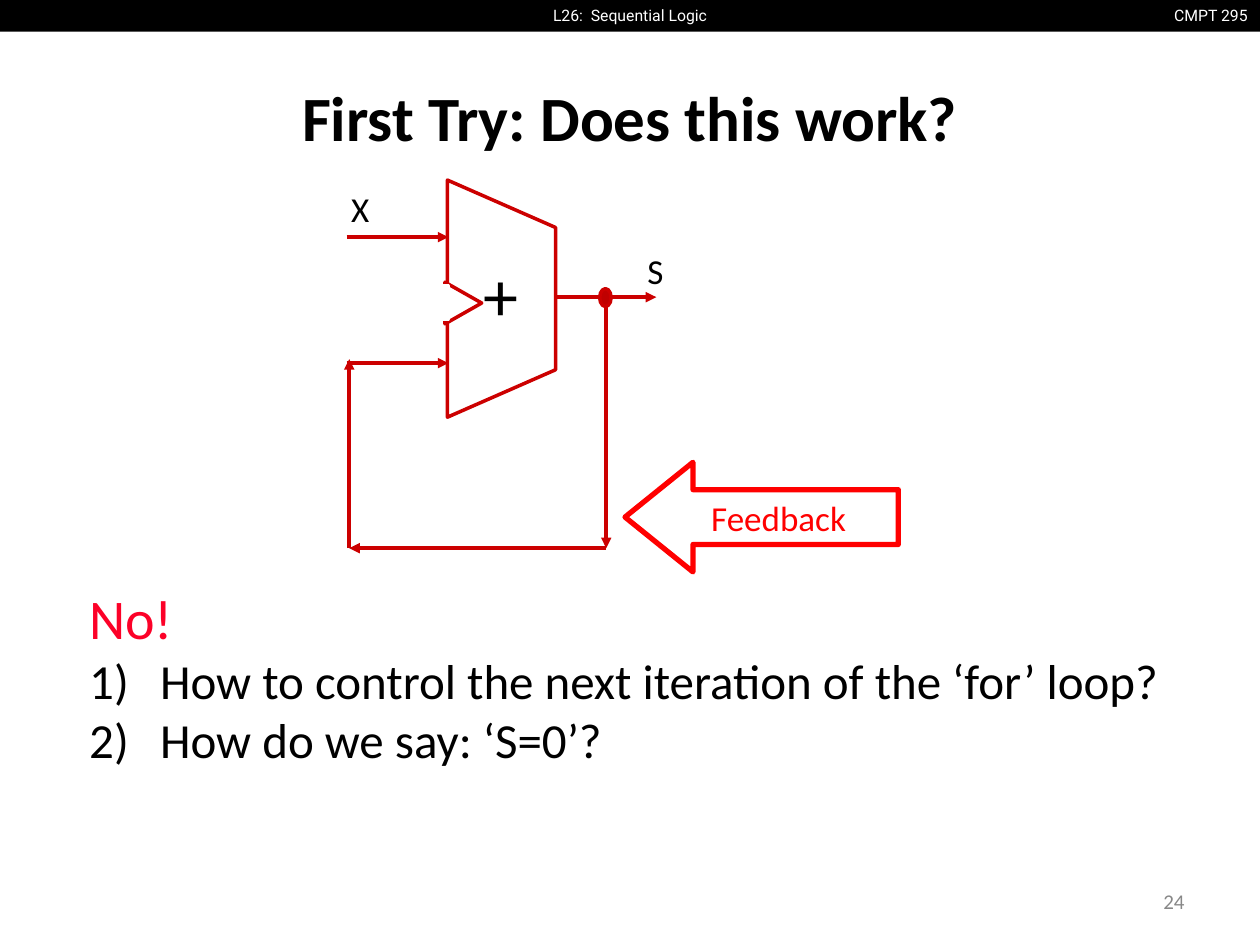
from typing import NamedTuple, Optional

from lxml.etree import SubElement
from pptx import Presentation
from pptx.dml.color import RGBColor
from pptx.enum.shapes import MSO_CONNECTOR, MSO_SHAPE
from pptx.enum.text import MSO_ANCHOR, PP_ALIGN
from pptx.oxml.ns import qn
from pptx.util import Cm, Pt

BLACK = RGBColor(0x00, 0x00, 0x00)
WHITE = RGBColor(0xFF, 0xFF, 0xFF)
GRAY = RGBColor(0x88, 0x88, 0x88)
RED = RGBColor(0xFF, 0x00, 0x00)
ANSWER_RED = RGBColor(0xFC, 0x01, 0x28)
WIRE_RED = RGBColor(0xCC, 0x00, 0x00)
NODE_RED = RGBColor(0xC0, 0x00, 0x00)

SLIDE_WIDTH, SLIDE_HEIGHT = 25.4, 19.05
HEADER_HEIGHT = 0.64
OUTPUT_Y = 5.99
FEEDBACK_Y = 11.05
FEEDBACK_LEFT, FEEDBACK_RIGHT = 7.04, 12.22
INPUT_START, INPUT_END = 6.99, 9.04


class Box(NamedTuple):
    left: float
    top: float
    width: float
    height: float

    def lengths(self) -> tuple:
        return tuple(Cm(value) for value in self)


class Label(NamedTuple):
    text: str
    box: Box
    size: float
    color: RGBColor = BLACK
    alignment: PP_ALIGN = PP_ALIGN.LEFT
    anchor: MSO_ANCHOR = MSO_ANCHOR.TOP
    font: str = "Calibri"
    bold: bool = False
    wrap: bool = False


class Wire(NamedTuple):
    start_x: float
    start_y: float
    end_x: float
    end_y: float


class Outline(NamedTuple):
    kind: MSO_SHAPE
    box: Box
    line: Optional[RGBColor] = WIRE_RED
    fill: Optional[RGBColor] = None
    rotation: float = 0
    line_width: float = 2


HEADER = Outline(MSO_SHAPE.RECTANGLE, Box(0, 0, SLIDE_WIDTH, HEADER_HEIGHT), None, BLACK)
FEEDBACK_ARROW = Outline(MSO_SHAPE.LEFT_ARROW, Box(12.6, 9.32, 5.51, 2.21), RED, line_width=3)
ADDER = Outline(MSO_SHAPE.FLOWCHART_MANUAL_OPERATION, Box(7.72, 4.93, 4.78, 2.18), rotation=270)
ADDER_DETAILS = [
    Outline(MSO_SHAPE.OVAL, Box(12.09, 5.82, 0.23, 0.36), fill=NODE_RED),
    Outline(MSO_SHAPE.ISOSCELES_TRIANGLE, Box(8.92, 5.74, 0.84, 0.74), rotation=90),
    Outline(MSO_SHAPE.RECTANGLE, Box(8.71, 5.77, 0.33, 0.66), WHITE, WHITE),
]

WIRES = [
    Wire(INPUT_START, 4.78, INPUT_END, 4.78),
    Wire(INPUT_START, 7.32, INPUT_END, 7.32),
    Wire(11.2, OUTPUT_Y, 13.23, OUTPUT_Y),
    Wire(FEEDBACK_LEFT, FEEDBACK_Y, FEEDBACK_LEFT, 7.24),
    Wire(FEEDBACK_RIGHT, OUTPUT_Y, FEEDBACK_RIGHT, FEEDBACK_Y),
    Wire(FEEDBACK_RIGHT, FEEDBACK_Y, FEEDBACK_LEFT, FEEDBACK_Y),
]

LABELS = [
    Label("CMPT 295", Box(23.34, 0, 2.06, HEADER_HEIGHT), 9, WHITE, PP_ALIGN.RIGHT, font="Roboto"),
    Label("L26:  Sequential Logic", Box(10.34, 0, 4.72, HEADER_HEIGHT), 9, WHITE,
          PP_ALIGN.CENTER, font="Roboto"),
    Label("First Try: Does this work?", Box(1.27, 0.76, 22.86, 3.18), 36,
          alignment=PP_ALIGN.CENTER, anchor=MSO_ANCHOR.MIDDLE, bold=True, wrap=True),
    Label("24", Box(18.21, 17.65, 5.92, 1.02), 12, GRAY, PP_ALIGN.RIGHT,
          MSO_ANCHOR.MIDDLE, wrap=True),
    Label("X", Box(6.83, 3.66, 0.89, 1.12), 20),
    Label("+", Box(9.5, 4.95, 1.22, 1.96), 40),
    Label("S", Box(12.8, 4.9, 0.84, 1.12), 20),
]

ANSWER = "No!"
QUESTIONS = [
    "How to control the next iteration of the ‘for’ loop?",
    "How do we say: ‘S=0’?",
]


def format_runs(paragraph, size: float, color: RGBColor,
                font: str = "Calibri", bold: bool = False) -> None:
    for run in paragraph.runs:
        run.font.name = font
        run.font.size = Pt(size)
        run.font.bold = bold
        run.font.color.rgb = color


def add_outline(slide, outline: Outline):
    shape = slide.shapes.add_shape(outline.kind, *outline.box.lengths())
    shape.shadow.inherit = False
    shape.rotation = outline.rotation
    if outline.fill is None:
        shape.fill.background()
    else:
        shape.fill.solid()
        shape.fill.fore_color.rgb = outline.fill
    if outline.line is None:
        shape.line.fill.background()
    else:
        shape.line.color.rgb = outline.line
        shape.line.width = Pt(outline.line_width)
    return shape


def add_wire(slide, wire: Wire) -> None:
    connector = slide.shapes.add_connector(
        MSO_CONNECTOR.STRAIGHT, *(Cm(value) for value in wire))
    connector.line.color.rgb = WIRE_RED
    connector.line.width = Pt(2)
    SubElement(connector.line._get_or_add_ln(), qn("a:tailEnd"), type="triangle")
    SubElement(connector._element.spPr, qn("a:effectLst"))


def add_label(slide, label: Label) -> None:
    text_frame = slide.shapes.add_textbox(*label.box.lengths()).text_frame
    text_frame.word_wrap = label.wrap
    text_frame.vertical_anchor = label.anchor
    text_frame.text = label.text
    paragraph = text_frame.paragraphs[0]
    paragraph.alignment = label.alignment
    format_runs(paragraph, label.size, label.color, label.font, label.bold)


def add_feedback_arrow(slide) -> None:
    shape = add_outline(slide, FEEDBACK_ARROW)
    shape.adjustments[0] = 0.5
    shape.adjustments[1] = 0.62
    text_frame = shape.text_frame
    text_frame.vertical_anchor = MSO_ANCHOR.MIDDLE
    text_frame.text = "Feedback"
    paragraph = text_frame.paragraphs[0]
    paragraph.alignment = PP_ALIGN.CENTER
    format_runs(paragraph, 20, RED)


def number_paragraph(paragraph) -> None:
    properties = paragraph._p.get_or_add_pPr()
    indent = Cm(1.43)
    properties.set("marL", str(indent))
    properties.set("indent", str(-indent))
    bullet_color = SubElement(properties, qn("a:buClr"))
    SubElement(bullet_color, qn("a:srgbClr"), val=str(BLACK))
    SubElement(properties, qn("a:buFont"), typeface="+mj-lt")
    SubElement(properties, qn("a:buAutoNum"), type="arabicParenR")


def add_answer(slide) -> None:
    text_frame = slide.shapes.add_textbox(*Box(1.55, 11.63, 22.25, 4.01).lengths()).text_frame
    text_frame.word_wrap = True
    text_frame.text = ANSWER
    format_runs(text_frame.paragraphs[0], 32, ANSWER_RED)
    for question in QUESTIONS:
        paragraph = text_frame.add_paragraph()
        paragraph.text = question
        number_paragraph(paragraph)
        format_runs(paragraph, 28, BLACK)


def main() -> None:
    presentation = Presentation()
    presentation.slide_width = Cm(SLIDE_WIDTH)
    presentation.slide_height = Cm(SLIDE_HEIGHT)
    slide = presentation.slides.add_slide(presentation.slide_layouts[6])
    add_outline(slide, HEADER)
    add_answer(slide)
    add_feedback_arrow(slide)
    add_outline(slide, ADDER)
    for wire in WIRES:
        add_wire(slide, wire)
    for label in LABELS:
        add_label(slide, label)
    for detail in ADDER_DETAILS:
        add_outline(slide, detail)
    presentation.save("out.pptx")


if __name__ == "__main__":
    main()
